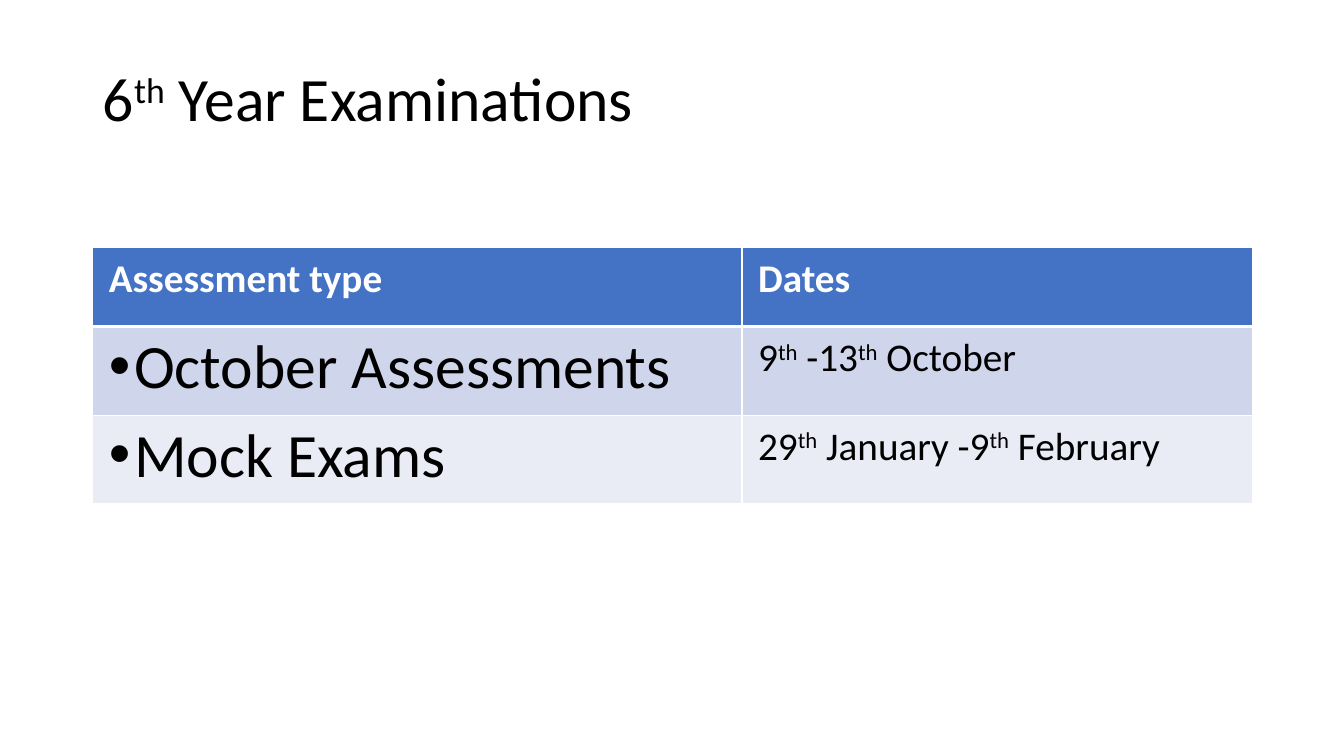
from lxml.etree import SubElement
from pptx import Presentation
from pptx.dml.color import RGBColor
from pptx.enum.text import MSO_ANCHOR, MSO_AUTO_SIZE, PP_ALIGN
from pptx.oxml.ns import qn
from pptx.util import Inches, Pt

FONT = "Calibri"
BLACK = RGBColor(0x00, 0x00, 0x00)
WHITE = RGBColor(0xFF, 0xFF, 0xFF)
HEADER_BLUE = RGBColor(0x44, 0x72, 0xC4)
BAND_COLORS = [RGBColor(0xCF, 0xD5, 0xEA), RGBColor(0xE9, 0xEB, 0xF5)]

COLUMN_WIDTHS = [6.44, 5.06]
ROW_HEIGHTS = [0.79, 0.88, 0.88]
HEADINGS = ["Assessment type", "Dates"]
EXAMS = [
    ("October Assessments", "9^th^ -13^th^ October"),
    ("Mock Exams", "29^th^ January -9^th^ February"),
]


def write_text(frame, text, size=28, color=BLACK, bold=False, bullet=False, spacing=None):
    """Write one paragraph, raising the parts enclosed in carets."""
    frame.word_wrap = True
    paragraph = frame.paragraphs[0]
    paragraph.alignment = PP_ALIGN.LEFT
    if spacing:
        paragraph.line_spacing = spacing
    if bullet:
        properties = paragraph._p.get_or_add_pPr()
        properties.set("marL", str(Inches(0.25)))
        properties.set("indent", str(-Inches(0.25)))
        SubElement(properties, qn("a:buFont"), typeface="Arial")
        SubElement(properties, qn("a:buChar"), char="•")
    for index, part in enumerate(text.split("^")):
        run = paragraph.add_run()
        run.text = part
        run.font.name = FONT
        run.font.size = Pt(size)
        run.font.bold = bold
        run.font.color.rgb = color
        if index % 2:
            run.font._element.set("baseline", "30000")


def set_borders(cell, top, bottom):
    """Draw white borders with the given top and bottom widths in points."""
    properties = cell._tc.get_or_add_tcPr()
    for side, width in (("L", 1), ("R", 1), ("T", top), ("B", bottom)):
        line = SubElement(properties, qn(f"a:ln{side}"), w=str(Pt(width)))
        fill = SubElement(line, qn("a:solidFill"))
        SubElement(fill, qn("a:srgbClr"), val=str(WHITE))


def format_cell(cell, fill, top=1, bottom=1):
    """Set the margins, borders and fill of a table cell."""
    cell.margin_left = cell.margin_right = Inches(0.16)
    cell.margin_top = cell.margin_bottom = Inches(0.08)
    set_borders(cell, top, bottom)
    cell.fill.solid()
    cell.fill.fore_color.rgb = fill


def add_title(slide, left, top, width, height):
    """Place the slide title in its placeholder."""
    title = slide.shapes.title
    title.left, title.top = Inches(left), Inches(top)
    title.width, title.height = Inches(width), Inches(height)
    frame = title.text_frame
    frame.auto_size = MSO_AUTO_SIZE.NONE
    frame.vertical_anchor = MSO_ANCHOR.BOTTOM
    write_text(frame, "6^th^ Year Examinations", size=44, spacing=0.9)


def add_exam_table(slide, left, top):
    """Place the table of assessments and dates."""
    table = slide.shapes.add_table(
        len(ROW_HEIGHTS), len(COLUMN_WIDTHS), Inches(left), Inches(top),
        Inches(sum(COLUMN_WIDTHS)), Inches(sum(ROW_HEIGHTS)),
    ).table
    for column, width in zip(table.columns, COLUMN_WIDTHS):
        column.width = Inches(width)
    for row, height in zip(table.rows, ROW_HEIGHTS):
        row.height = Inches(height)
    for column, heading in enumerate(HEADINGS):
        cell = table.cell(0, column)
        format_cell(cell, HEADER_BLUE, bottom=3)
        write_text(cell.text_frame, heading, color=WHITE, bold=True)
    for row, (exam, dates) in enumerate(EXAMS, start=1):
        exam_cell, dates_cell = table.cell(row, 0), table.cell(row, 1)
        for cell in (exam_cell, dates_cell):
            format_cell(cell, BAND_COLORS[row - 1], top=3 if row == 1 else 1)
        write_text(exam_cell.text_frame, exam, size=44, bullet=True, spacing=0.9)
        write_text(dates_cell.text_frame, dates)


def main():
    """Build and save the presentation."""
    presentation = Presentation()
    presentation.slide_width = Inches(13.33)
    presentation.slide_height = Inches(7.5)
    slide = presentation.slides.add_slide(presentation.slide_layouts[5])
    add_title(slide, 0.92, 0.28, 11.49, 1.11)
    add_exam_table(slide, 0.92, 2.45)
    presentation.save("out.pptx")


if __name__ == "__main__":
    main()
